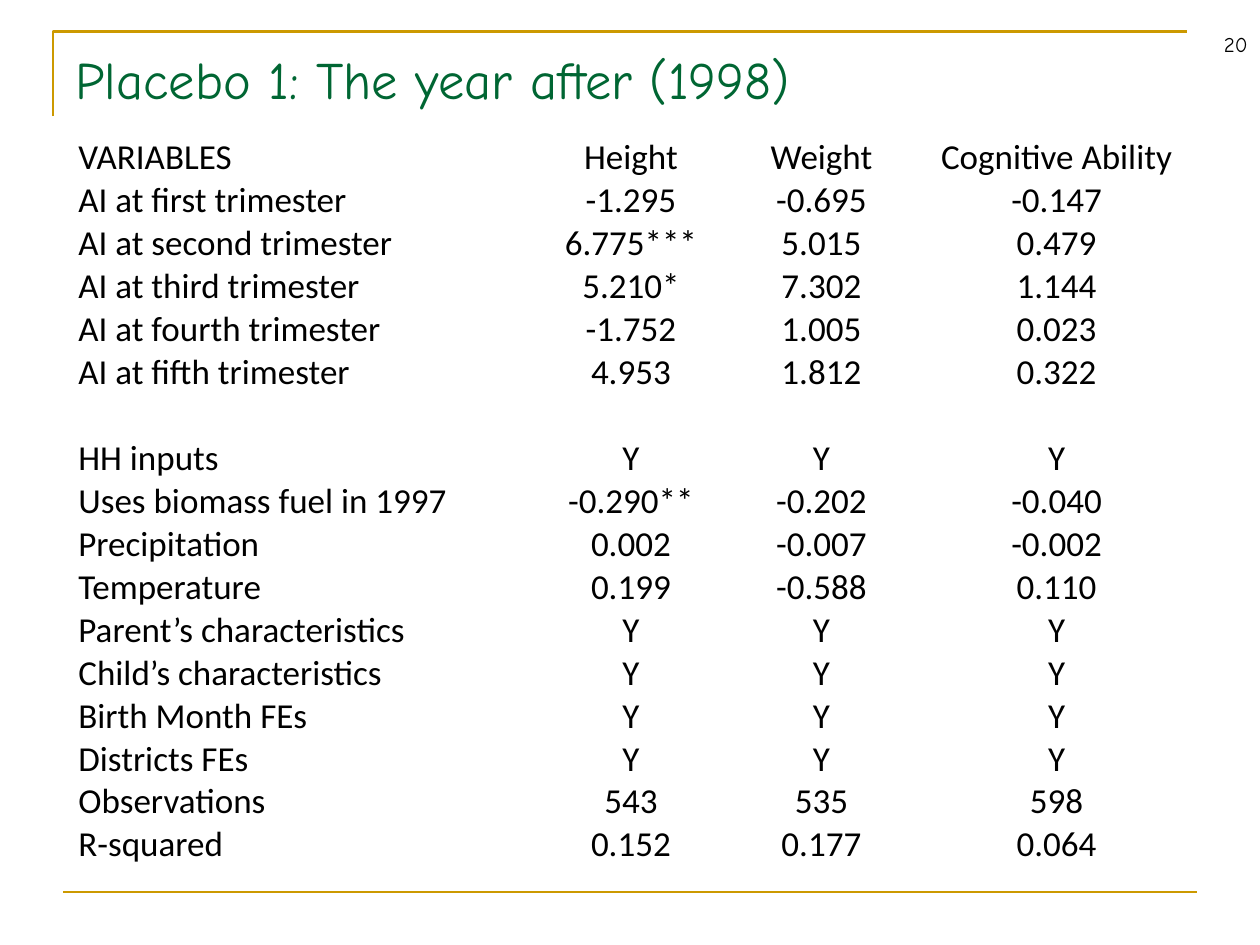
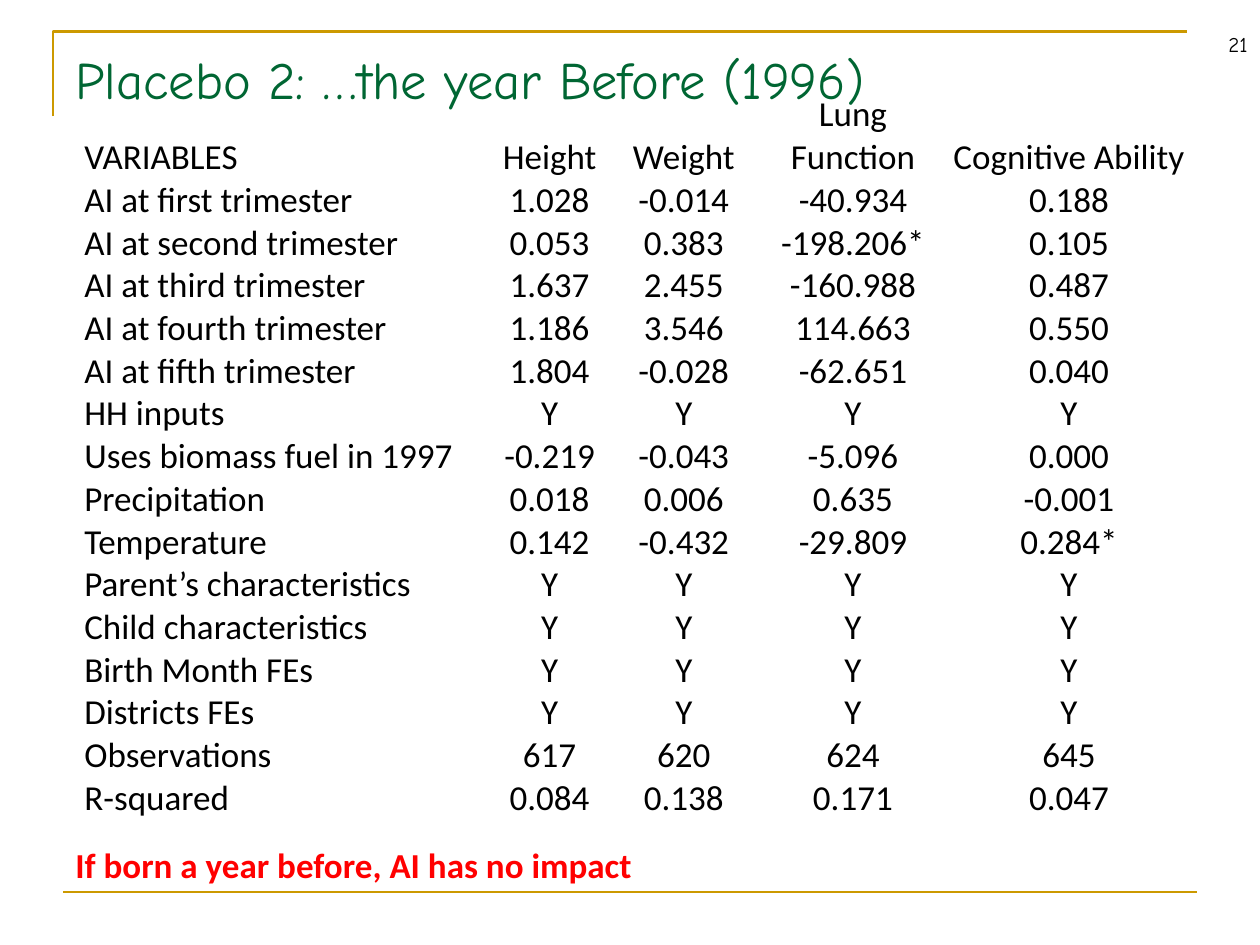
from dataclasses import dataclass

from pptx import Presentation
from pptx import util as u
from pptx.dml.color import RGBColor
from pptx.enum import shapes, text
from pptx.oxml import parse_xml
from pptx.oxml.ns import nsdecls, qn


@dataclass(frozen=True)
class Theme:
    title: str = "006633"
    ink: str = "000000"
    rule: str = "CC9900"
    alert: str = "FF0000"
    title_font: str = "Comic Neue"
    body_font: str = "Calibri"
    title_size: int = 30
    body_size: int = 20
    number_size: int = 12
    rule_width: float = 1.5
    plain_table: str = "{2D5ABB26-0587-4C30-8999-92F81FD0307C}"


THEME = Theme()
FIRST_NUMBER = 20

SLIDES = [
    dict(
        title="Placebo 1: The year after (1998)",
        left=1.5, top=2.74, inset=0.08,
        cols=(9.3, 3.84, 3.84, 5.64),
        header_height=0.87, body_height=13.86,
        rows=[
            ("VARIABLES", "Height", "Weight", "Cognitive Ability"),
            ("AI at first trimester", "-1.295", "-0.695", "-0.147"),
            ("AI at second trimester", "6.775***", "5.015", "0.479"),
            ("AI at third trimester", "5.210*", "7.302", "1.144"),
            ("AI at fourth trimester", "-1.752", "1.005", "0.023"),
            ("AI at fifth trimester", "4.953", "1.812", "0.322"),
            ("", "", "", ""),
            ("HH inputs", "Y", "Y", "Y"),
            ("Uses biomass fuel in 1997", "-0.290**", "-0.202", "-0.040"),
            ("Precipitation", "0.002", "-0.007", "-0.002"),
            ("Temperature", "0.199", "-0.588", "0.110"),
            ("Parent’s characteristics", "Y", "Y", "Y"),
            ("Child’s characteristics", "Y", "Y", "Y"),
            ("Birth Month FEs", "Y", "Y", "Y"),
            ("Districts FEs", "Y", "Y", "Y"),
            ("Observations", "543", "535", "598"),
            ("R-squared", "0.152", "0.177", "0.064"),
        ],
    ),
    dict(
        title="Placebo 2: …the year Before (1996)",
        left=1.68, top=1.88, inset=0.02,
        cols=(8.13, 2.54, 2.87, 3.95, 4.76),
        header_height=1.73, body_height=12.92,
        rows=[
            ("VARIABLES", "Height", "Weight", "Lung Function", "Cognitive Ability"),
            ("AI at first trimester", "1.028", "-0.014", "-40.934", "0.188"),
            ("AI at second trimester", "0.053", "0.383", "-198.206*", "0.105"),
            ("AI at third trimester", "1.637", "2.455", "-160.988", "0.487"),
            ("AI at fourth trimester", "1.186", "3.546", "114.663", "0.550"),
            ("AI at fifth trimester", "1.804", "-0.028", "-62.651", "0.040"),
            ("HH inputs", "Y", "Y", "Y", "Y"),
            ("Uses biomass fuel in 1997", "-0.219", "-0.043", "-5.096", "0.000"),
            ("Precipitation", "0.018", "0.006", "0.635", "-0.001"),
            ("Temperature", "0.142", "-0.432", "-29.809", "0.284*"),
            ("Parent’s characteristics", "Y", "Y", "Y", "Y"),
            ("Child characteristics", "Y", "Y", "Y", "Y"),
            ("Birth Month FEs", "Y", "Y", "Y", "Y"),
            ("Districts FEs", "Y", "Y", "Y", "Y"),
            ("Observations", "617", "620", "624", "645"),
            ("R-squared", "0.084", "0.138", "0.171", "0.047"),
        ],
        note="If born a year before, AI has no impact",
    ),
]


def write(tf, words, size, font, color, align=text.PP_ALIGN.LEFT, bold=False):
    p = tf.paragraphs[0]
    p.text = words
    p.alignment = align
    p.font.size = u.Pt(size)
    p.font.name = font
    p.font.bold = bold
    p.font.color.rgb = RGBColor.from_string(color)


def style_rule(sp):
    sp.line.color.rgb = RGBColor.from_string(THEME.rule)
    sp.line.width = u.Pt(THEME.rule_width)


def add_frame(s):
    corner = s.shapes.build_freeform(u.Cm(1.07), u.Cm(2.34))
    corner.add_line_segments(
        [(u.Cm(1.07), u.Cm(0.64)), (u.Cm(23.93), u.Cm(0.64))], close=False)
    sp = corner.convert_to_shape()
    sp.fill.background()
    sp.shadow.inherit = False
    style_rule(sp)

    base = s.shapes.add_connector(
        shapes.MSO_CONNECTOR.STRAIGHT, u.Cm(1.27), u.Cm(17.98), u.Cm(24.13), u.Cm(17.98))
    style_rule(base)
    base._element.spPr.append(parse_xml(f"<a:effectLst {nsdecls('a')}/>"))


def add_title(s, words):
    sp = s.shapes.title
    sp.left, sp.top, sp.width, sp.height = u.Cm(1.27), u.Cm(0.8), u.Cm(22.86), u.Cm(1.55)
    tf = sp.text_frame
    tf.auto_size = text.MSO_AUTO_SIZE.NONE
    tf.vertical_anchor = text.MSO_ANCHOR.BOTTOM
    write(tf, words, THEME.title_size, THEME.title_font, THEME.title)


def add_text(s, box, *args, **kwargs):
    tf = s.shapes.add_textbox(*map(u.Cm, box)).text_frame
    tf.word_wrap = True
    tf.vertical_anchor = text.MSO_ANCHOR.BOTTOM
    write(tf, *args, **kwargs)


def add_results(s, data):
    rows, cols = data["rows"], data["cols"]
    height = data["header_height"] + data["body_height"]
    table = s.shapes.add_table(
        len(rows), len(cols), u.Cm(data["left"]), u.Cm(data["top"]),
        u.Cm(sum(cols)), u.Cm(height)).table
    table.first_row = table.horz_banding = False
    table._tbl.tblPr.find(qn("a:tableStyleId")).text = THEME.plain_table
    for col, width in zip(table.columns, cols):
        col.width = u.Cm(width)
    for i, row in enumerate(rows):
        body_row = data["body_height"] / (len(rows) - 1)
        table.rows[i].height = u.Cm(body_row if i else data["header_height"])
        for j, words in enumerate(row):
            cell = table.cell(i, j)
            cell.fill.background()
            cell.margin_left = cell.margin_right = u.Cm(data["inset"])
            cell.margin_top = cell.margin_bottom = 0
            cell.vertical_anchor = text.MSO_ANCHOR.BOTTOM
            align = text.PP_ALIGN.CENTER if j else text.PP_ALIGN.LEFT
            write(cell.text_frame, words, THEME.body_size, THEME.body_font, THEME.ink, align)


def main():
    prs = Presentation()
    prs.slide_width, prs.slide_height = u.Cm(25.4), u.Cm(19.05)
    for number, data in enumerate(SLIDES, FIRST_NUMBER):
        s = prs.slides.add_slide(prs.slide_layouts.get_by_name("Title Only"))
        add_frame(s)
        add_title(s, data["title"])
        add_text(s, (23.93, 0, 1.47, 1.27), str(number), THEME.number_size,
                 THEME.title_font, THEME.ink, text.PP_ALIGN.RIGHT)
        if "note" in data:
            add_text(s, (1.27, 16.88, 21.59, 1.1), data["note"], THEME.body_size,
                     THEME.body_font, THEME.alert, bold=True)
        add_results(s, data)
    prs.save("out.pptx")


if __name__ == "__main__":
    main()
